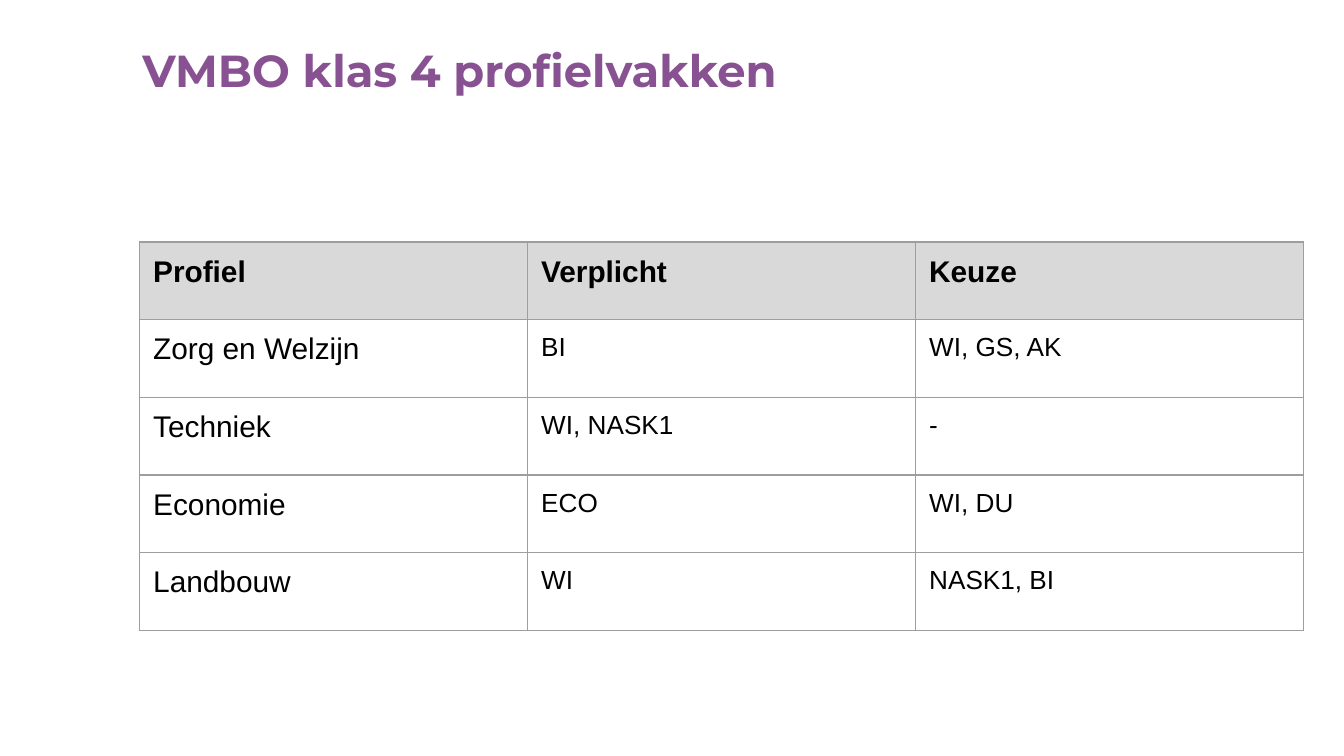
from lxml import etree
from pptx import Presentation
from pptx.dml.color import RGBColor
from pptx.enum.text import MSO_ANCHOR as Anchor, PP_ALIGN as Align
from pptx.oxml.ns import qn
from pptx.util import Inches, Pt

ROWS = [
    ("Profiel", "Verplicht", "Keuze"),
    ("Zorg en Welzijn", "BI", "WI, GS, AK"),
    ("Techniek", "WI, NASK1", "-"),
    ("Economie", "ECO", "WI, DU"),
    ("Landbouw", "WI", "NASK1, BI"),
]


def rgb(value):
    return RGBColor.from_string(value)


def write(tf, text, size=14, font="Arial", color="000000", bold=False):
    p = tf.paragraphs[0]
    p.alignment = Align.LEFT
    r = p.add_run()
    r.text = text
    r.font.size = Pt(size)
    r.font.name = font
    r.font.bold = bold
    r.font.color.rgb = rgb(color)


def set_margins(box, margin=0.1):
    box.margin_left = box.margin_right = Inches(margin)
    box.margin_top = box.margin_bottom = Inches(margin)


def set_borders(cell, color="9E9E9E", width=0.75):
    tc_pr = cell._tc.get_or_add_tcPr()
    for side in ("a:lnL", "a:lnR", "a:lnT", "a:lnB"):
        ln = etree.SubElement(tc_pr, qn(side), w=str(Pt(width)))
        fill = etree.SubElement(ln, qn("a:solidFill"))
        etree.SubElement(fill, qn("a:srgbClr"), val=color)


def add_title(slide, text, left, top, width, height):
    sp = slide.shapes.title
    sp.left, sp.top = Inches(left), Inches(top)
    sp.width, sp.height = Inches(width), Inches(height)
    tf = sp.text_frame
    tf.word_wrap = True
    tf.vertical_anchor = Anchor.MIDDLE
    set_margins(tf)
    write(tf, text, size=24, font="Montserrat", color="885292", bold=True)


def add_subject_table(slide, rows, left, top, width, height):
    frame = slide.shapes.add_table(
        len(rows), len(rows[0]),
        Inches(left), Inches(top), Inches(width), Inches(height))
    table = frame.table
    table.horz_banding = False
    for i, row in enumerate(rows):
        for j, text in enumerate(row):
            cell = table.cell(i, j)
            header = i == 0
            set_margins(cell)
            set_borders(cell)
            if header:
                cell.fill.solid()
                cell.fill.fore_color.rgb = rgb("D9D9D9")
            else:
                cell.fill.background()
            size = 16 if header or j == 0 else 14
            write(cell.text_frame, text, size=size, bold=header)


def main():
    prs = Presentation()
    prs.slide_width = Inches(10)
    prs.slide_height = prs.slide_width * 9 // 16
    slide = prs.slides.add_slide(prs.slide_layouts[5])
    add_title(slide, "VMBO klas 4 profielvakken", 0.96, 0.06, 8.22, 0.92)
    add_subject_table(slide, ROWS, 1.04, 1.8, 8.66, 2.89)
    prs.save("out.pptx")


if __name__ == "__main__":
    main()
